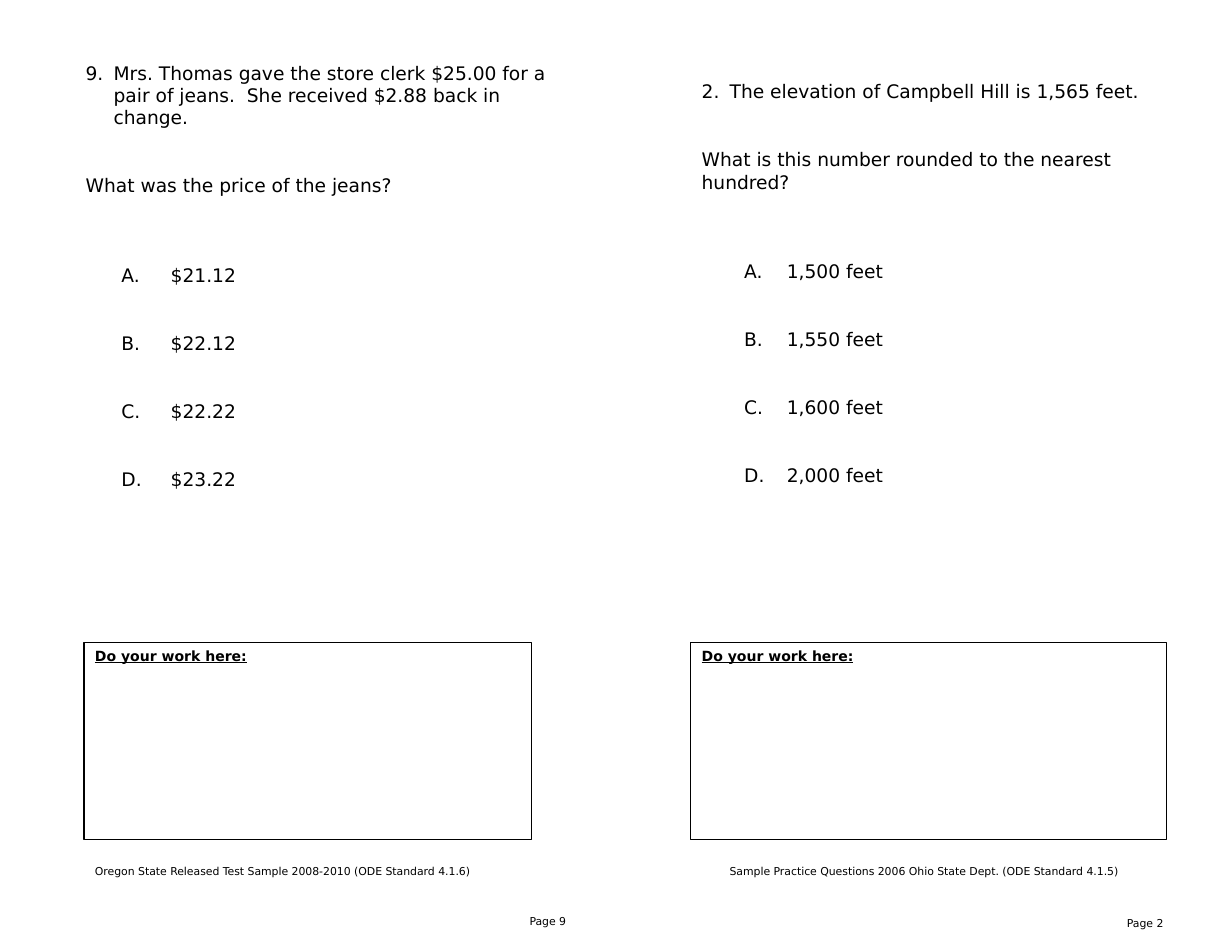
from dataclasses import dataclass

from lxml import etree
from pptx import Presentation
from pptx.dml.color import RGBColor
from pptx.enum.shapes import MSO_SHAPE
from pptx.enum.text import MSO_ANCHOR, PP_ALIGN
from pptx.oxml.ns import qn
from pptx.util import Pt

RECTANGLE = MSO_SHAPE.RECTANGLE
TOP = MSO_ANCHOR.TOP
LEFT, RIGHT = PP_ALIGN.LEFT, PP_ALIGN.RIGHT


@dataclass(frozen=True)
class Theme:
    font: str = "DejaVu Sans"
    ink: RGBColor = RGBColor(0, 0, 0)
    body: float = 12
    prompt: float = 9
    small: float = 7
    border: float = 0.75
    gap: float = 29.3
    wide_gap: float = 43.3


class Worksheet:
    def __init__(self, slide, theme):
        self.slide = slide
        self.theme = theme

    def add_text(self, paragraph, text, size, align=LEFT, before=0, **emphasis):
        for name, value in {"alignment": align, "space_before": Pt(before)}.items():
            setattr(paragraph, name, value)
        run = paragraph.add_run()
        run.text = text
        styles = {"name": self.theme.font, "size": Pt(size), **emphasis}
        for name, value in styles.items():
            setattr(run.font, name, value)
        run.font.color.rgb = self.theme.ink

    def number(self, paragraph, scheme, margin, hanging, start=1):
        properties = paragraph._p.get_or_add_pPr()
        properties.set("marL", str(Pt(margin)))
        properties.set("indent", str(-Pt(hanging)))
        bullet = etree.SubElement(properties, qn("a:buAutoNum"), type=scheme)
        if start > 1:
            bullet.set("startAt", str(start))

    def text_frame(self, box):
        frame = self.slide.shapes.add_textbox(*map(Pt, box)).text_frame
        frame.word_wrap = True
        return frame

    def label(self, box, text, align=LEFT):
        frame = self.text_frame(box)
        self.add_text(frame.paragraphs[0], text, self.theme.small, align)

    def work_area(self, box, prompt):
        area = self.slide.shapes.add_shape(RECTANGLE, *map(Pt, box))
        area.shadow.inherit = False
        area.fill.background()
        area.line.color.rgb = self.theme.ink
        area.line.width = Pt(self.theme.border)
        frame = area.text_frame
        for name, value in {"word_wrap": True, "vertical_anchor": TOP}.items():
            setattr(frame, name, value)
        self.add_text(frame.paragraphs[0], prompt, self.theme.prompt,
                      bold=True, underline=True)

    def problem(self, box, number, story, question, answers, hanging):
        theme = self.theme
        frame = self.text_frame(box)
        opening = frame.paragraphs[0]
        self.add_text(opening, story, theme.body)
        self.number(opening, "arabicPeriod", 18, 18, number)
        self.add_text(frame.add_paragraph(), question, theme.body, before=theme.gap)
        for index, answer in enumerate(answers):
            choice = frame.add_paragraph()
            before = theme.gap if index else theme.wide_gap
            self.add_text(choice, answer, theme.body, before=before)
            self.number(choice, "alphaUcPeriod", 54.7, hanging)


PAGES = [
    {
        "number": 9,
        "story": "Mrs. Thomas gave the store clerk $25.00 for a pair of jeans.  "
                 "She received $2.88 back in change.",
        "question": "What was the price of the jeans?",
        "answers": ["$21.12", "$22.12", "$22.22", "$23.22"],
        "hanging": 31.7,
        "problem_box": (48, 36, 330, 284),
        "work_box": (54, 413, 288, 127),
        "credit": "Oregon State Released Test Sample 2008-2010 (ODE Standard 4.1.6)",
        "credit_box": (54, 552, 282, 16),
        "folio_box": (312, 584.6, 59, 21.6),
    },
    {
        "number": 2,
        "story": "The elevation of Campbell Hill is 1,565 feet.",
        "question": "What is this number rounded to the nearest hundred?",
        "answers": [f"{feet} feet" for feet in ("1,500", "1,550", "1,600", "2,000")],
        "hanging": 27.4,
        "problem_box": (444, 48, 306, 269),
        "work_box": (444, 413, 306, 127),
        "credit": "Sample Practice Questions 2006 Ohio State Dept. (ODE Standard 4.1.5)",
        "credit_box": (462, 552, 288, 16),
        "folio_box": (696, 586, 59, 21.6),
    },
]


def main():
    deck = Presentation()
    deck.slide_width, deck.slide_height = Pt(792), Pt(612)
    sheet = Worksheet(deck.slides.add_slide(deck.slide_layouts[6]), Theme())
    for page in PAGES:
        sheet.label(page["folio_box"], f"Page {page['number']}", RIGHT)
        sheet.work_area(page["work_box"], "Do your work here:")
        sheet.label(page["credit_box"], page["credit"])
        sheet.problem(page["problem_box"], page["number"], page["story"],
                      page["question"], page["answers"], page["hanging"])
    deck.save("out.pptx")


if __name__ == "__main__":
    main()
